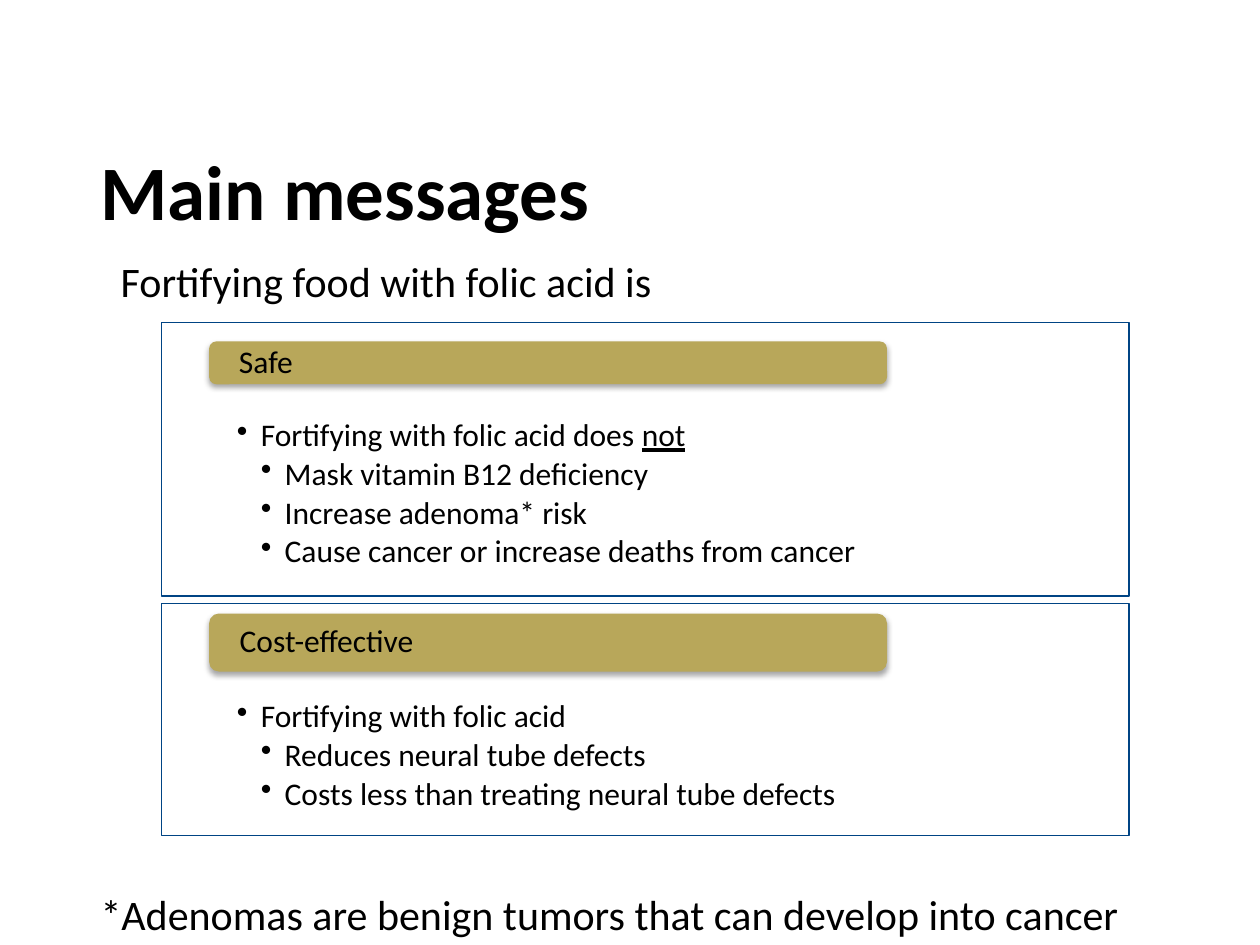
import pptx
import pptx.dml.color
import pptx.enum.shapes
import pptx.enum.text
import pptx.oxml.ns
import pptx.util
from lxml import etree

Inches = pptx.util.Inches
Pt = pptx.util.Pt
Shape = pptx.enum.shapes.MSO_SHAPE
Anchor = pptx.enum.text.MSO_ANCHOR
Align = pptx.enum.text.PP_ALIGN
qn = pptx.oxml.ns.qn


def color(hex_string):
    return pptx.dml.color.RGBColor.from_string(hex_string)


class SlideBuilder:
    font = "Calibri"
    ink = "000000"
    panel_fill = "FFFFFF"
    panel_line = "004484"
    gold = "B8A75A"
    left, width = 1.28, 7.68

    def __init__(self, page):
        self.page = page

    def style(self, para, size, bold=False):
        para.alignment = Align.LEFT
        para.font.name = self.font
        para.font.size = Pt(size)
        para.font.bold = bold
        para.font.color.rgb = color(self.ink)

    def frame(self, box, insets, anchor=Anchor.TOP):
        frame = box.text_frame
        frame.word_wrap = True
        frame.vertical_anchor = anchor
        (frame.margin_left, frame.margin_top,
         frame.margin_right, frame.margin_bottom) = map(Inches, insets)
        return frame

    def text(self, at, words, size, bold=False, anchor=Anchor.TOP, spacing=1.0):
        box = self.page.shapes.add_textbox(*map(Inches, at))
        para = self.frame(box, (0.1, 0.05, 0.1, 0.05), anchor).paragraphs[0]
        para.text = words
        para.line_spacing = spacing
        self.style(para, size, bold)

    def shape(self, kind, at, fill):
        shape = self.page.shapes.add_shape(kind, *map(Inches, at))
        shape.fill.solid()
        shape.fill.fore_color.rgb = color(fill)
        shape.line.fill.background()
        shape.shadow.inherit = False
        return shape

    def panel(self, top, height, bullets):
        """Outlined panel; bullets are (level, words, underlined ending)."""
        panel = self.shape(Shape.RECTANGLE, (self.left, top, self.width, height),
                           self.panel_fill)
        panel.line.color.rgb = color(self.panel_line)
        panel.line.width = Pt(0.75)
        fill_color = panel._element.spPr.find(qn("a:solidFill"))[0]
        etree.SubElement(fill_color, qn("a:alpha"), val="90000")
        frame = self.frame(panel, (0.6, 0.77, 0.6, 0.14))
        for index, (level, words, underlined) in enumerate(bullets):
            para = frame.add_paragraph() if index else frame.paragraphs[0]
            self.bullet(para, level)
            para.add_run().text = words
            if underlined:
                span = para.add_run()
                span.text = underlined
                span.font.underline = True

    def bullet(self, para, level):
        para.level = level
        props = para._p.get_or_add_pPr()
        props.set("marL", str(Inches(0.19 * level)))
        props.set("indent", str(-Inches(0.19)))
        etree.SubElement(props, qn("a:buChar"), char="•")
        para.line_spacing = 0.9
        para.space_after = Pt(2.7)
        self.style(para, 18)

    def heading(self, top, height, words):
        bar = self.shape(Shape.ROUNDED_RECTANGLE, (1.66, top, 5.38, height), self.gold)
        effects = bar._element.spPr.find(qn("a:effectLst"))
        shadow = etree.SubElement(effects, qn("a:outerShdw"), blurRad=str(Pt(3.1)),
                                  dist=str(Pt(1.8)), dir="5400000", rotWithShape="0")
        tint = etree.SubElement(shadow, qn("a:srgbClr"), val="000000")
        etree.SubElement(tint, qn("a:alpha"), val="35000")
        para = self.frame(bar, (0.22, 0, 0.22, 0), Anchor.MIDDLE).paragraphs[0]
        para.text = words
        para.line_spacing = 0.9
        self.style(para, 18)


def main():
    deck = pptx.Presentation()
    deck.slide_width, deck.slide_height = Inches(10), Inches(7.5)
    builder = SlideBuilder(deck.slides.add_slide(deck.slide_layouts[6]))

    # Title
    builder.text((0.7, 0.83, 8.62, 1.45), "Main messages", 44, bold=True,
                 anchor=Anchor.MIDDLE, spacing=0.9)

    # Safety message
    builder.panel(2.56, 2.17, [
        (1, "Fortifying with folic acid does ", "not"),
        (2, "Mask vitamin B12 deficiency", None),
        (2, "Increase adenoma* risk", None),
        (2, "Cause cancer or increase deaths from cancer", None),
    ])
    builder.heading(2.71, 0.34, "Safe")

    # Cost message
    builder.panel(4.79, 1.84, [
        (1, "Fortifying with folic acid", None),
        (2, "Reduces neural tube defects", None),
        (2, "Costs less than treating neural tube defects", None),
    ])
    builder.heading(4.87, 0.46, "Cost-effective")

    # Lead-in and footnote
    builder.text((0.86, 1.98, 8.11, 0.5), "Fortifying food with folic acid is", 24)
    builder.text((0.7, 7, 9.44, 0.5),
                 "*Adenomas are benign tumors that can develop into cancer", 24)

    deck.save("out.pptx")


if __name__ == "__main__":
    main()
